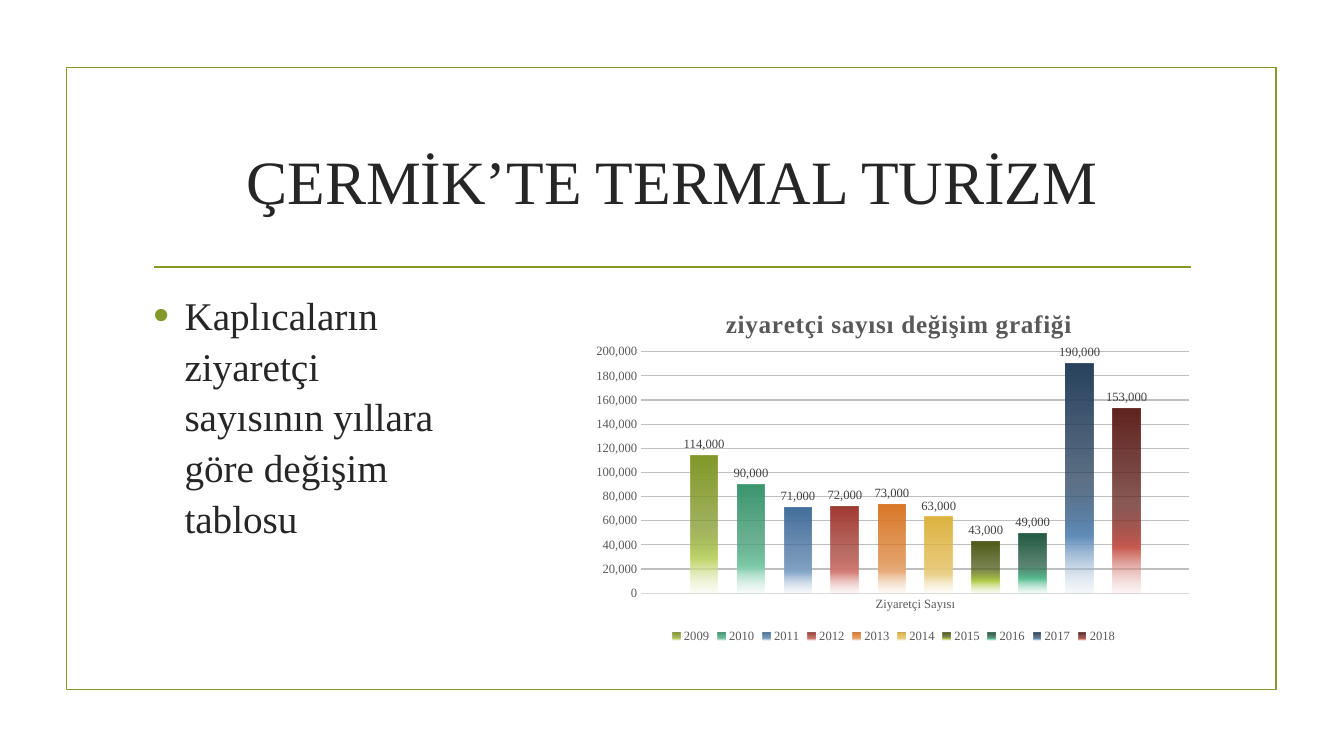
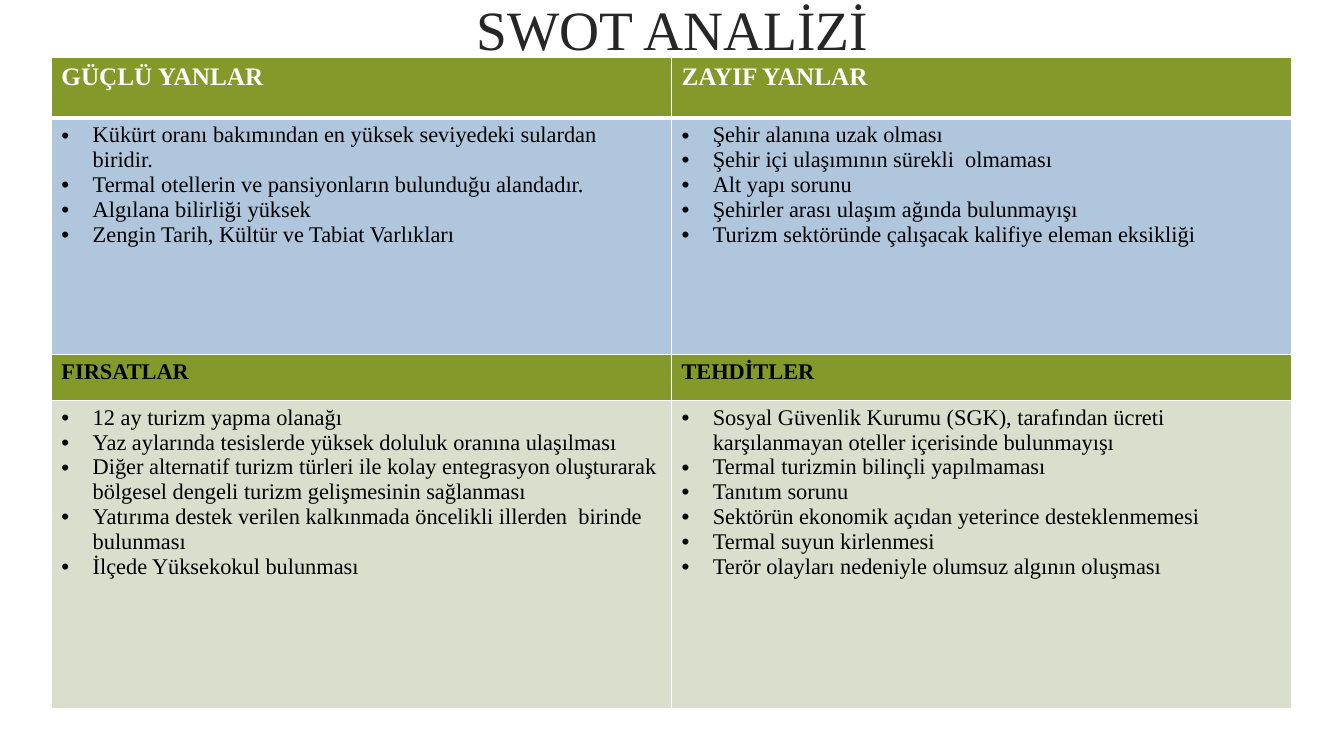
import pptx
import pptx.chart.data
import pptx.dml.color
import pptx.enum.chart
import pptx.enum.shapes
import pptx.enum.text
import pptx.oxml
import pptx.oxml.ns
import pptx.util
from lxml import etree

Inches = pptx.util.Inches
Pt = pptx.util.Pt
qn = pptx.oxml.ns.qn

FONT = "Times New Roman"
COLORS = {
    "olive": "83992A", "ink": "262626", "black": "000000", "white": "FFFFFF",
    "blue": "AFC6DD", "sage": "D9DECD", "grey": "595959", "label": "404040",
    "axis": "D9D9D9", "grid": "BFBFBF",
}
CONTENT_LEFT, CONTENT_WIDTH = 1.42, 10.5
BODY_TOP, BODY_HEIGHT = 2.8, 3.63
HANG = 0.31

THERMAL_TITLE = "ÇERMİK’TE TERMAL TURİZM"
THERMAL_POINT = "Kaplıcaların ziyaretçi sayısının yıllara göre değişim tablosu"
CHART_TITLE = "ziyaretçi sayısı değişim grafiği"
CHART_CATEGORY = "Ziyaretçi Sayısı"
FIRST_YEAR = 2009
VISITORS = [
    (114000, "83992A", "C1D66B", "EAF1CE"),
    (90000, "3C9770", "7FCCAB", "D4EEE3"),
    (71000, "44709D", "88A9CB", "D7E2EE"),
    (72000, "A23C33", "D47F77", "F1D4D2"),
    (73000, "D97828", "E8AE7E", "F7E4D4"),
    (63000, "DEB340", "EBD18C", "F8F0D9"),
    (43000, "4F5C19", "B2CC46", "E5EEC1"),
    (49000, "245B43", "5ABE93", "C8E9DB"),
    (190000, "29435E", "628EBB", "CBD9E8"),
    (153000, "61241F", "C85A51", "EDC8C5"),
]

SWOT_TITLE = "SWOT ANALİZİ"
SWOT_ROWS = [
    {"height": 0.6, "fill": "olive", "color": "white", "size": 18, "heading": True,
     "cells": [["GÜÇLÜ YANLAR"], ["ZAYIF YANLAR"]]},
    {"height": 2.35, "fill": "blue", "color": "black", "size": 16, "heading": False,
     "cells": [
         ["Kükürt oranı bakımından en yüksek seviyedeki sulardan biridir.",
          "Termal otellerin ve pansiyonların bulunduğu alandadır.",
          "Algılana bilirliği yüksek",
          "Zengin Tarih, Kültür ve Tabiat Varlıkları"],
         ["Şehir alanına uzak olması",
          "Şehir içi ulaşımının sürekli  olmaması",
          "Alt yapı sorunu",
          "Şehirler arası ulaşım ağında bulunmayışı",
          "Turizm sektöründe çalışacak kalifiye eleman eksikliği"]]},
    {"height": 0.45, "fill": "olive", "color": "black", "size": 16, "heading": True,
     "cells": [["FIRSATLAR"], ["TEHDİTLER"]]},
    {"height": 3.06, "fill": "sage", "color": "black", "size": 16, "heading": False,
     "cells": [
         ["12 ay turizm yapma olanağı",
          "Yaz aylarında tesislerde yüksek doluluk oranına ulaşılması",
          "Diğer alternatif turizm türleri ile kolay entegrasyon oluşturarak bölgesel dengeli turizm gelişmesinin sağlanması",
          "Yatırıma destek verilen kalkınmada öncelikli illerden  birinde bulunması",
          "İlçede Yüksekokul bulunması"],
         ["Sosyal Güvenlik Kurumu (SGK), tarafından ücreti karşılanmayan oteller içerisinde bulunmayışı",
          "Termal turizmin bilinçli yapılmaması",
          "Tanıtım sorunu",
          "Sektörün ekonomik açıdan yeterince desteklenmemesi",
          "Termal suyun kirlenmesi",
          "Terör olayları nedeniyle olumsuz algının oluşması"]]},
]


def rgb(name):
    return pptx.dml.color.RGBColor.from_string(COLORS[name])


def style_font(font, size, color, bold=False):
    font.name, font.size, font.bold = FONT, Pt(size), bold
    font.color.rgb = rgb(color)


def add(parent, tag, **attributes):
    return etree.SubElement(parent, qn(tag), {k: str(v) for k, v in attributes.items()})


def place(shape, left, top, width, height):
    shape.left, shape.top = Inches(left), Inches(top)
    shape.width, shape.height = Inches(width), Inches(height)


def set_bullet(paragraph, color, percent):
    props = paragraph._p.get_or_add_pPr()
    props.set("marL", str(Inches(HANG)))
    props.set("indent", str(-Inches(HANG)))
    add(add(props, "a:buClr"), "a:srgbClr", val=COLORS[color])
    add(props, "a:buSzPct", val=percent * 1000)
    add(props, "a:buFont", typeface="Arial")
    add(props, "a:buChar", char="•")


def set_title(slide, text, top, height, size):
    title = slide.shapes.title
    place(title, CONTENT_LEFT, top, CONTENT_WIDTH, height)
    frame = title.text_frame
    frame.text = text
    frame.auto_size = pptx.enum.text.MSO_AUTO_SIZE.NONE
    frame.vertical_anchor = pptx.enum.text.MSO_ANCHOR.MIDDLE
    heading = frame.paragraphs[0]
    heading.alignment = pptx.enum.text.PP_ALIGN.CENTER
    style_font(heading.font, size, "ink")


def decorate_master(prs, slide):
    border = slide.shapes.add_shape(
        pptx.enum.shapes.MSO_SHAPE.RECTANGLE,
        Inches(0.66), Inches(0.67), Inches(12), Inches(6.17))
    border.fill.background()
    border.shadow.inherit = False
    rule = slide.shapes.add_connector(
        pptx.enum.shapes.MSO_CONNECTOR.STRAIGHT,
        Inches(1.53), Inches(2.65), Inches(11.81), Inches(2.65))
    for number, part in enumerate((border, rule)):
        part.line.color.rgb = rgb("olive")
        part.line.width = Pt(1.25)
        part._element.xpath(".//p:cNvPr")[0].set("id", str(100 + number))
        prs.slide_master.shapes._spTree.insert(2 + number, part._element)
    add(rule._element.spPr, "a:effectLst")


def set_layout(parent, index, **shares):
    layout = parent.find(qn("c:layout"))
    if layout is None:
        layout = etree.Element(qn("c:layout"))
        parent.insert(index, layout)
    manual = add(layout, "c:manualLayout")
    if "w" in shares:
        add(manual, "c:layoutTarget", val="inner")
    for side in ("x", "y"):
        add(manual, f"c:{side}Mode", val="edge")
    for side, share in shares.items():
        add(manual, f"c:{side}", val=share)


def fade(series, base, middle, pale):
    fill = series.format.fill
    fill.gradient()
    fill.gradient_angle = 270
    stops = series._element.spPr.find(".//" + qn("a:gsLst"))
    stops.clear()
    for position, color, alpha in ((0, base, 100), (51, base, 75),
                                   (75, middle, 100), (100, pale, 15)):
        stop = add(stops, "a:gs", pos=position * 1000)
        add(add(stop, "a:srgbClr", val=color), "a:alpha", val=alpha * 1000)


def add_visitor_chart(slide):
    data = pptx.chart.data.CategoryChartData(number_format="#,##0")
    data.categories = [CHART_CATEGORY]
    for offset, (count, *_) in enumerate(VISITORS):
        data.add_series(str(FIRST_YEAR + offset), [count])
    chart = slide.shapes.add_chart(
        pptx.enum.chart.XL_CHART_TYPE.COLUMN_CLUSTERED, Inches(5.81), Inches(BODY_TOP),
        Inches(6.11), Inches(BODY_HEIGHT), data).chart
    style_font(chart.font, 10, "black")

    chart.has_title = True
    chart.chart_title.text_frame.text = CHART_TITLE
    heading = chart.chart_title.text_frame.paragraphs[0]
    style_font(heading.font, 18, "grey", True)
    heading._p.pPr.find(qn("a:defRPr")).set("spc", "50")
    set_layout(chart.chart_title._element, 1, x=0.22, y=0.06)
    set_layout(chart._chartSpace.chart.plotArea, 0, x=0.09, y=0.19, w=0.89, h=0.66)

    chart.has_legend = True
    chart.legend.position = pptx.enum.chart.XL_LEGEND_POSITION.BOTTOM
    chart.legend.include_in_layout = False
    style_font(chart.legend.font, 9, "grey")

    for axis in (chart.category_axis, chart.value_axis):
        axis.major_tick_mark = axis.minor_tick_mark = pptx.enum.chart.XL_TICK_MARK.NONE
        style_font(axis.tick_labels.font, 9, "grey")
    chart.category_axis.format.line.color.rgb = rgb("axis")
    chart.category_axis.format.line.width = Pt(0.75)
    values = chart.value_axis
    values.minimum_scale, values.maximum_scale, values.major_unit = 0, 200000, 20000
    values.format.line.fill.background()
    values.major_gridlines.format.line.color.rgb = rgb("grid")
    values.major_gridlines.format.line.width = Pt(0.75)
    values.tick_labels.number_format = "#,##0"
    values.tick_labels.number_format_is_linked = False

    plot = chart.plots[0]
    plot.gap_width, plot.overlap, plot.vary_by_categories = 355, -70, False
    for series, (_, *shades) in zip(plot.series, VISITORS):
        fade(series, *shades)
        labels = series.data_labels
        labels.show_value = True
        labels.position = pptx.enum.chart.XL_LABEL_POSITION.OUTSIDE_END
        labels.number_format = "#,##0"
        labels.number_format_is_linked = False
        style_font(labels.font, 9, "label")


def set_borders(cell, top, bottom):
    props = cell._tc.get_or_add_tcPr()
    for index, (side, width) in enumerate((("L", 1), ("R", 1), ("T", top), ("B", bottom))):
        line = etree.Element(qn(f"a:ln{side}"), {"w": str(Pt(width))})
        add(add(line, "a:solidFill"), "a:srgbClr", val=COLORS["white"])
        props.insert(index, line)


def add_swot_table(slide):
    table = slide.shapes.add_table(
        len(SWOT_ROWS), 2, Inches(0.51), Inches(0.57), Inches(12.3),
        Inches(sum(row["height"] for row in SWOT_ROWS))).table
    for index, row in enumerate(SWOT_ROWS):
        table.rows[index].height = Inches(row["height"])
        for column, points in enumerate(row["cells"]):
            cell = table.cell(index, column)
            cell.fill.solid()
            cell.fill.fore_color.rgb = rgb(row["fill"])
            set_borders(cell, 3 if index == 1 else 1, 3 if index == 0 else 1)
            cell.text_frame.text = "\n".join(points)
            for paragraph in cell.text_frame.paragraphs:
                if not row["heading"]:
                    set_bullet(paragraph, row["color"], 100)
                style_font(paragraph.font, row["size"], row["color"], row["heading"])


def build_thermal_slide(slide):
    set_title(slide, THERMAL_TITLE, 1.07, 1.43, 44)
    body = slide.placeholders[1]
    place(body, CONTENT_LEFT, BODY_TOP, 3.17, BODY_HEIGHT)
    body.text_frame.text = THERMAL_POINT
    body.text_frame.auto_size = pptx.enum.text.MSO_AUTO_SIZE.NONE
    point = body.text_frame.paragraphs[0]
    set_bullet(point, "olive", 115)
    point.space_before, point.space_after = Pt(0), Pt(6)
    point.line_spacing = 1.08
    style_font(point.font, 28, "ink")
    add_visitor_chart(slide)


def build_swot_slide(slide):
    set_title(slide, SWOT_TITLE, 0, 0.57, 39.6)
    add_swot_table(slide)


def main():
    prs = pptx.Presentation()
    prs.slide_width, prs.slide_height = Inches(13.33), Inches(7.5)
    thermal = prs.slides.add_slide(prs.slide_layouts[1])
    decorate_master(prs, thermal)
    build_thermal_slide(thermal)
    build_swot_slide(prs.slides.add_slide(prs.slide_layouts[5]))
    prs.save("out.pptx")


if __name__ == "__main__":
    main()
